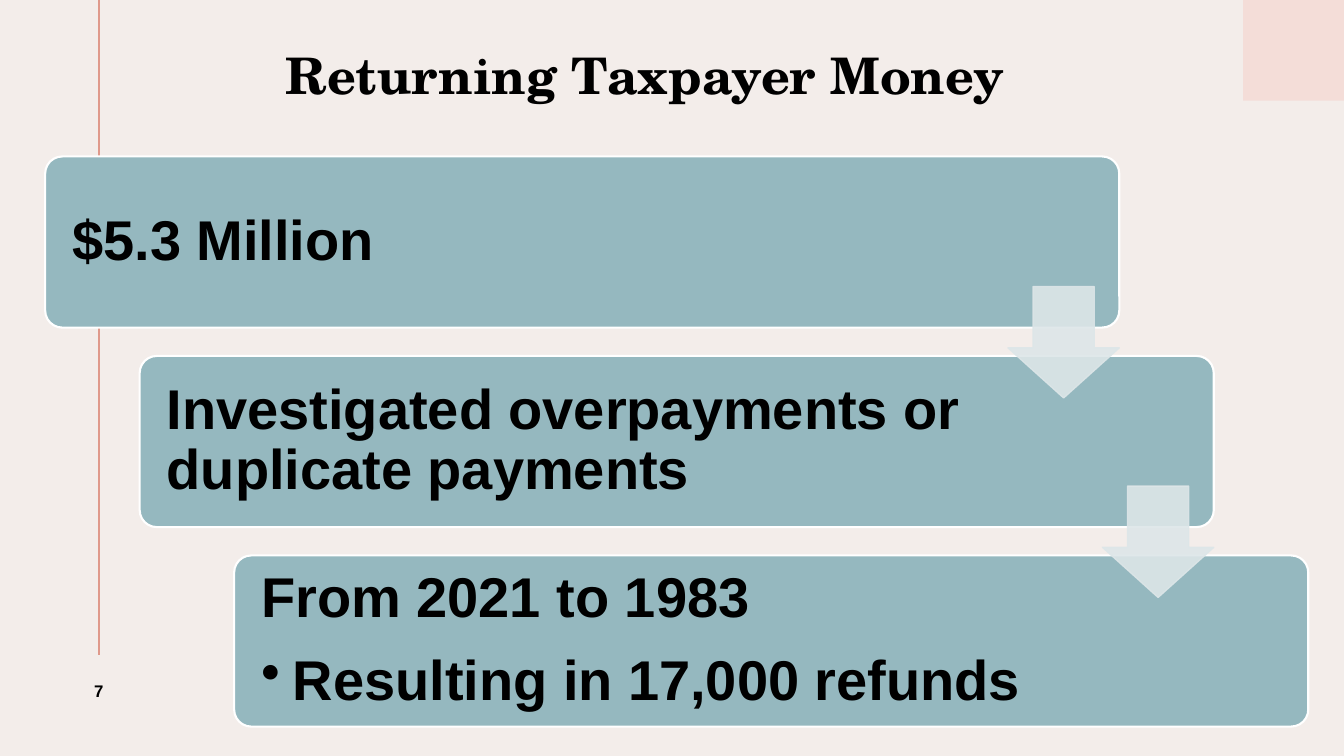
"""Build the slide on returned taxpayer money as a three-step cascade."""
from lxml import etree
from pptx import Presentation, util as u
from pptx.dml.color import RGBColor
from pptx.enum import shapes, text
from pptx.oxml.ns import qn

PX = 9525
COLORS = {
    "background": "F3EDEA", "corner": "F4DDD8", "rule": "DF998B",
    "step": "95B8BF", "outline": "FFFFFF", "arrow": "DDE6E8", "text": "000000",
}
STEPS = [
    ["$5.3 Million"],
    ["Investigated overpayments or duplicate payments"],
    ["From 2021 to 1983", "Resulting in 17,000 refunds"],
]
STEP_DX, STEP_DY = 90, 190


def style_text(p, size, font="Arial"):
    for r in p.runs:
        r.font.size, r.font.name, r.font.bold = u.Pt(size), font, True
        r.font.color.rgb = RGBColor.from_string(COLORS["text"])


def add_block(kind, box, fill, line=None, width=1):
    sp = slide.shapes.add_shape(kind, *[n * PX for n in box])
    sp.shadow.inherit = False
    sp.fill.solid()
    sp.fill.fore_color.rgb = RGBColor.from_string(COLORS[fill])
    if line:
        sp.line.color.rgb = RGBColor.from_string(COLORS[line])
        sp.line.width = u.Pt(width)
    else:
        sp.line.fill.background()
    return sp


prs = Presentation()
prs.slide_width, prs.slide_height = 1280 * PX, 720 * PX
slide = prs.slides.add_slide(prs.slide_layouts[5])
slide.background.fill.solid()
slide.background.fill.fore_color.rgb = RGBColor.from_string(COLORS["background"])

add_block(shapes.MSO_SHAPE.RECTANGLE, (1184, 0, 96, 96), "corner")

rule = slide.shapes.add_connector(shapes.MSO_CONNECTOR.STRAIGHT, 94 * PX, 0, 94 * PX, 624 * PX)
rule.line.color.rgb = RGBColor.from_string(COLORS["rule"])
rule.line.width = u.Pt(1.5)
etree.SubElement(rule._element.spPr, qn("a:effectLst"))

title = slide.shapes.title
title.left, title.top, title.width, title.height = [n * PX for n in (104, 13, 1030, 122)]
tf = title.text_frame
tf.text = "Returning Taxpayer Money"
tf.vertical_anchor = text.MSO_ANCHOR.MIDDLE
tf.margin_left = 0
p = tf.paragraphs[0]
p.alignment, p.line_spacing = text.PP_ALIGN.CENTER, 0.9
style_text(p, 36, "TeX Gyre Schola")

number = slide.shapes.add_textbox(*[n * PX for n in (43, 624, 102, 68)])
tf = number.text_frame
tf.text = "7"
tf.word_wrap = True
tf.vertical_anchor = text.MSO_ANCHOR.MIDDLE
p = tf.paragraphs[0]
p.alignment, p.space_after = text.PP_ALIGN.CENTER, u.Pt(6)
style_text(p, 12)
p.runs[0].font._element.set("spc", "150")

for i, lines in enumerate(STEPS):
    box = (43 + i * STEP_DX, 149 + i * STEP_DY, 1023, 163)
    step = add_block(shapes.MSO_SHAPE.ROUNDED_RECTANGLE, box, "step", "outline", 1.5)
    step.adjustments[0] = 0.1
    tf = step.text_frame
    tf.text = "\n".join(lines)
    tf.word_wrap = True
    tf.vertical_anchor = text.MSO_ANCHOR.MIDDLE
    tf.margin_left = tf.margin_top = tf.margin_bottom = 21 * PX
    tf.margin_right = 218 * PX
    for level, p in enumerate(tf.paragraphs):
        p.alignment, p.line_spacing = text.PP_ALIGN.LEFT, 0.9
        p.level, p.space_after = level, u.Pt(6 if level else 16)
        style_text(p, 40)
        if level:
            pPr = p._p.get_or_add_pPr()
            pPr.set("marL", str(30 * PX))
            pPr.set("indent", str(-30 * PX))
            etree.SubElement(pPr, qn("a:buChar"), char="•")

for i in range(len(STEPS) - 1):
    box = (960 + i * STEP_DX, 273 + i * STEP_DY, 106, 106)
    arrow = add_block(shapes.MSO_SHAPE.DOWN_ARROW, box, "arrow", "arrow")
    arrow.adjustments[0], arrow.adjustments[1] = 0.55, 0.45
    for color in arrow._element.spPr.iter(qn("a:srgbClr")):
        etree.SubElement(color, qn("a:alpha"), val="90000")

prs.save("out.pptx")
